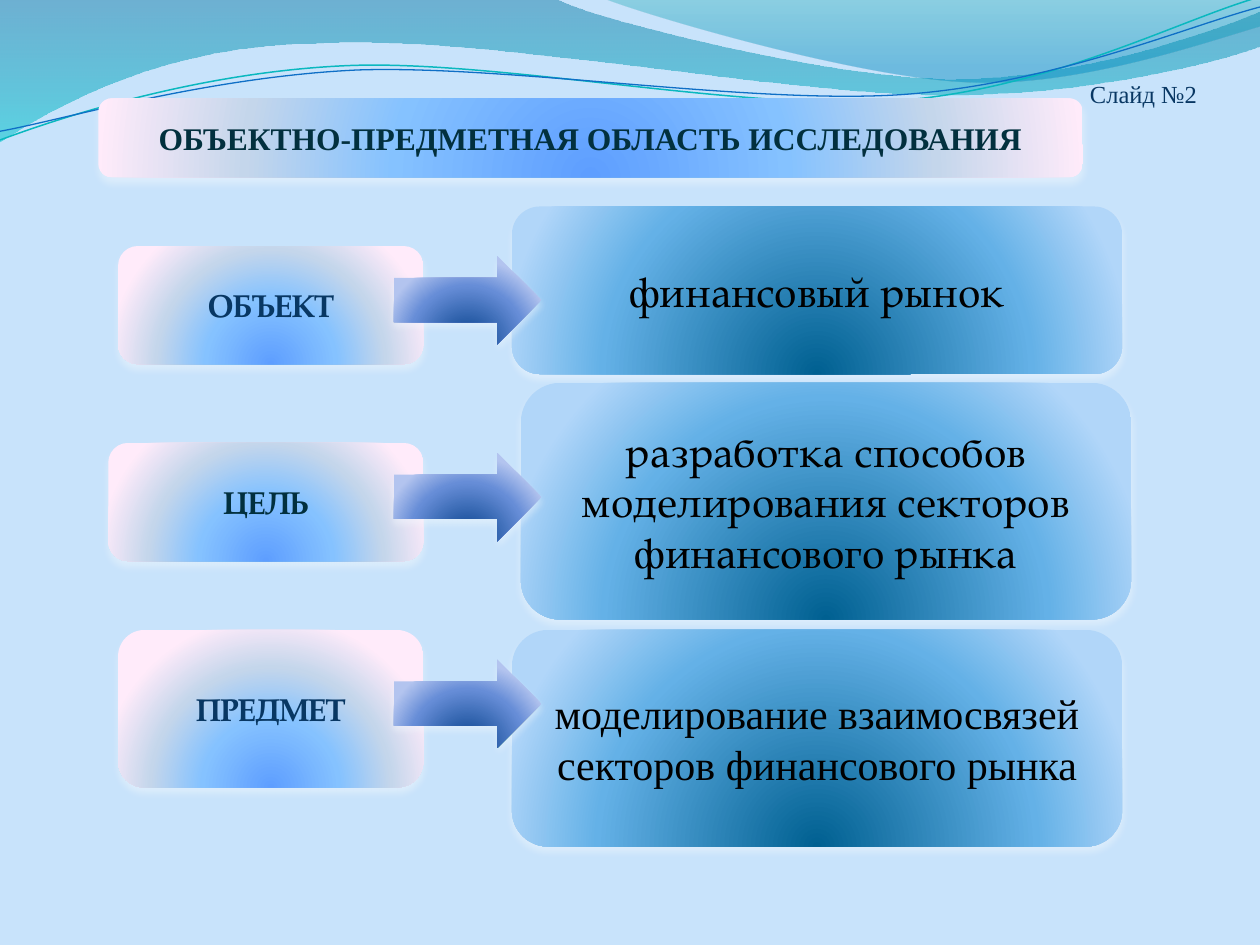
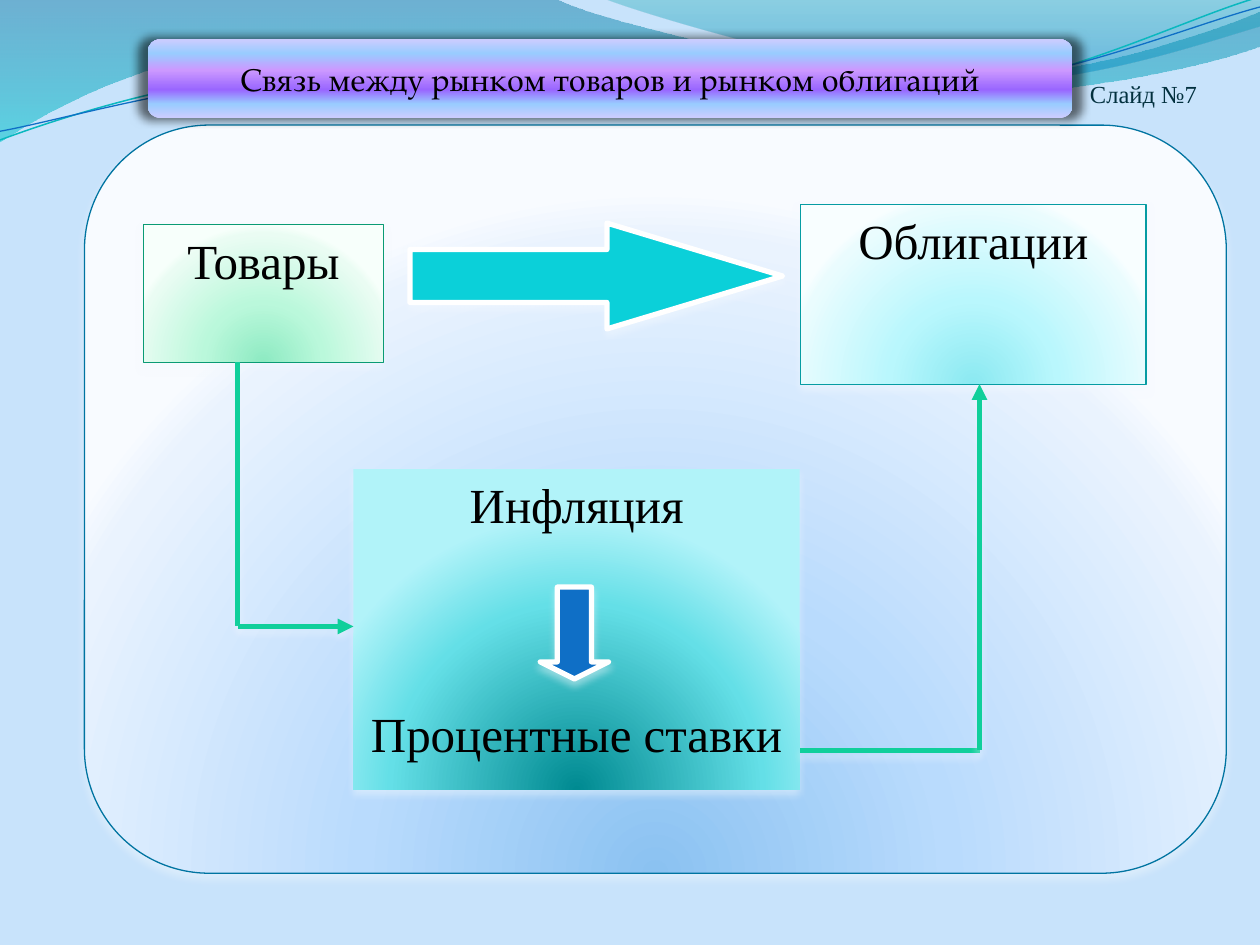
from itertools import pairwise

from pptx import Presentation
from pptx.dml.color import RGBColor as RGB
from pptx.enum.shapes import MSO_CONNECTOR, MSO_SHAPE
from pptx.enum.text import MSO_ANCHOR, PP_ALIGN
from pptx.oxml import parse_xml
from pptx.oxml.ns import nsdecls, qn
from pptx.util import Pt

SERIF = "Times New Roman"
PAGELLA = "TeX Gyre Pagella"

SKY = RGB(0xC8, 0xE3, 0xFB)
BLACK = RGB(0x00, 0x00, 0x00)
WHITE = RGB(0xFF, 0xFF, 0xFF)
NAVY = RGB(0x08, 0x37, 0x63)
DARK_TEAL = RGB(0x02, 0x30, 0x3E)
BLUE = RGB(0x0F, 0x6F, 0xC6)
TURQUOISE = RGB(0x0B, 0xD0, 0xD9)
GREEN = RGB(0x10, 0xCF, 0x9B)
WAVE_LINE = RGB(0x0A, 0xB8, 0xBF)
PANEL_LINE = RGB(0x00, 0x74, 0xA1)
GOODS_LINE = RGB(0x0A, 0x9B, 0x74)
BONDS_LINE = RGB(0x06, 0x9C, 0xA3)
GLOW = RGB(0xF4, 0xFA, 0xFF)

# Gradient stops: position in percent, colour, and opacity where it is not full
PINK_BLUE = [(0, RGB(0x5E, 0x9E, 0xFF)), (40, RGB(0x85, 0xC2, 0xFF)),
             (70, RGB(0xC4, 0xD6, 0xEB)), (100, RGB(0xFF, 0xEB, 0xFA))]
DEEP_BLUE = [(0, RGB(0x00, 0x60, 0x91)), (68, RGB(0x64, 0xB1, 0xE7)),
             (100, RGB(0xB1, 0xD6, 0xF9))]
ARROW_BLUE = [(0, RGB(0x00, 0x3D, 0x87)), (68, RGB(0x66, 0x8D, 0xD7)),
              (100, RGB(0xB3, 0xC4, 0xEF))]
PALE_BLUE = [(0, RGB(0x8B, 0xC2, 0xF1)), (43, RGB(0xB9, 0xDB, 0xFD)),
             (93, RGB(0xEA, 0xF3, 0xFE)), (100, RGB(0xF8, 0xFB, 0xFF))]
PALE_GREEN = [(0, RGB(0x8D, 0xEA, 0xC2)), (43, RGB(0xBA, 0xF8, 0xDB)),
              (93, RGB(0xEA, 0xFC, 0xF3)), (100, RGB(0xF7, 0xFF, 0xFB))]
PALE_AQUA = [(0, RGB(0x8B, 0xE9, 0xF1)), (43, RGB(0xB9, 0xF7, 0xFD)),
             (93, RGB(0xEA, 0xFC, 0xFE)), (100, RGB(0xF8, 0xFE, 0xFF))]
DEEP_TEAL = [(0, RGB(0x00, 0x8A, 0x91)), (68, RGB(0x64, 0xDF, 0xE7)),
             (100, RGB(0xB1, 0xF3, 0xF9))]
VIOLET = [(0, RGB(0xCC, 0xCC, 0xFF)), (18, RGB(0x99, 0xCC, 0xFF)),
          (36, RGB(0x99, 0x66, 0xFF)), (61, RGB(0xCC, 0x99, 0xFF)),
          (82, RGB(0x99, 0xCC, 0xFF)), (100, RGB(0xCC, 0xCC, 0xFF))]
BIG_WAVE_FILL = [(0, RGB(0x00, 0x74, 0xA1), 45), (100, RGB(0x00, 0xC6, 0xCF), 55)]
SMALL_WAVE_FILL = [(0, RGB(0x00, 0xA1, 0xA9), 30), (80, RGB(0x00, 0x8B, 0xBF), 45)]

# Outlines in points: a pair is a straight step, six numbers are a Bezier curve
BIG_WAVE = [(0, -1), (317, -1), (343, 12, 478, 45, 546, 45),
            (614, 45, 690, 19, 720, 6.5), (721, 26), (708, 32, 626, 55, 537, 54),
            (447, 54, 275, 20, 185, 24.5), (93, 25, 33, 60, -1, 81.5)]
SMALL_WAVE = [(345, -1), (367, 8, 491, 45, 554, 47),
              (616, 50, 692, 23, 720, 15), (720, 0)]
TEAL_CURVE = [(0, 80), (35, 67, 114, 41, 199, 37.5),
              (284, 34, 427, 64, 513, 57.5), (600, 51, 675, 11, 719, -1.5)]
BLUE_CURVE = [(0, 75), (34, 69, 118, 44, 204, 40),
              (290, 37, 430, 60, 516, 54), (602, 48, 678, 15, 720, 4)]


def gradient_fill(shape, stops, angle=None):
    """Fill linearly at the angle, or in circles from the bottom centre without one."""
    gs = ""
    for position, color, *opacity in stops:
        alpha = f'<a:alpha val="{opacity[0] * 1000}"/>' if opacity else ""
        gs += (f'<a:gs pos="{position * 1000}"><a:srgbClr val="{color}">'
               f'{alpha}</a:srgbClr></a:gs>')
    if angle is None:
        direction = ('<a:path path="circle"><a:fillToRect l="50000" t="130000" '
                     'r="50000" b="-30000"/></a:path>')
    else:
        direction = f'<a:lin ang="{angle * 60000}" scaled="0"/>'
    shape.fill.gradient()
    properties = shape._element.spPr
    properties.replace(properties.find(qn("a:gradFill")), parse_xml(
        f'<a:gradFill {nsdecls("a")} rotWithShape="1"><a:gsLst>{gs}</a:gsLst>'
        f'{direction}</a:gradFill>'))


def cast_shadow(shape, color=GLOW, opacity=48, blur=4.5, distance=3, spread=(100, 100)):
    properties = shape._element.spPr
    old = properties.find(qn("a:effectLst"))
    if old is not None:
        properties.remove(old)
    across, down = spread
    properties.append(parse_xml(
        f'<a:effectLst {nsdecls("a")}><a:outerShdw blurRad="{Pt(blur)}" '
        f'dist="{Pt(distance)}" dir="5400000" sx="{across * 1000}" sy="{down * 1000}" '
        f'algn="ctr" rotWithShape="0"><a:srgbClr val="{color}">'
        f'<a:alpha val="{opacity * 1000}"/></a:srgbClr></a:outerShdw></a:effectLst>'))


def set_line(shape, color, width):
    if color is None:
        shape.line.fill.background()
    else:
        shape.line.color.rgb = color
        shape.line.width = Pt(width)


def add_block(slide, kind, box, fill, line=None, line_width=0.75, angle=None):
    """Add a preset shape; fill is one colour or a list of gradient stops."""
    block = slide.shapes.add_shape(kind, *map(Pt, box))
    if isinstance(fill, RGB):
        block.fill.solid()
        block.fill.fore_color.rgb = fill
    else:
        gradient_fill(block, fill, angle)
    set_line(block, line, line_width)
    block.shadow.inherit = False
    cast_shadow(block)
    return block


def style(paragraph, font, size, color, bold=False, align=PP_ALIGN.CENTER):
    paragraph.alignment = align
    paragraph.font.name = font
    paragraph.font.size = Pt(size)
    paragraph.font.color.rgb = color
    paragraph.font.bold = bold


def write(block, text, font, size, color=BLACK, bold=False):
    frame = block.text_frame
    frame.word_wrap = True
    frame.vertical_anchor = MSO_ANCHOR.MIDDLE
    frame.text = text
    style(frame.paragraphs[0], font, size, color, bold)


def write_from_top(block, *texts, gap=0):
    frame = block.text_frame
    frame.word_wrap = True
    frame.vertical_anchor = MSO_ANCHOR.TOP
    frame.text = "\n".join(texts)
    for paragraph in frame.paragraphs:
        style(paragraph, SERIF, 28, BLACK)
        paragraph.space_after = Pt(10)
    for paragraph in frame.paragraphs[1:]:
        paragraph.space_before = Pt(gap)


def bend(wave, outline):
    """Turn the straight steps that the outline gives as curves into Bezier curves."""
    legs = list(wave._element.iter(qn("a:lnTo")))
    for leg, step in zip(legs, outline[1:]):
        if len(step) == 6:
            points = "".join(f'<a:pt x="{Pt(x) - wave.left}" y="{Pt(y) - wave.top}"/>'
                             for x, y in zip(step[::2], step[1::2]))
            leg.getparent().replace(leg, parse_xml(
                f'<a:cubicBezTo {nsdecls("a")}>{points}</a:cubicBezTo>'))


def add_outline(slide, outline, fill=None, line=None, width=0.75):
    ends = [tuple(map(Pt, step[-2:])) for step in outline]
    builder = slide.shapes.build_freeform(*ends[0])
    builder.add_line_segments(ends[1:], close=fill is not None)
    wave = builder.convert_to_shape()
    bend(wave, outline)
    if fill:
        gradient_fill(wave, fill, 90)
    else:
        wave.fill.background()
    set_line(wave, line, width)
    wave.shadow.inherit = False


def add_route(slide, *corners):
    """Join the corners with lines, the last of which ends in an arrowhead."""
    for start, end in pairwise(corners):
        leg = slide.shapes.add_connector(
            MSO_CONNECTOR.STRAIGHT, *map(Pt, start), *map(Pt, end))
        set_line(leg, GREEN, 3)
        cast_shadow(leg)
    leg.line._get_or_add_ln().append(
        parse_xml(f'<a:tailEnd {nsdecls("a")} type="triangle"/>'))


def add_base_slide(prs, number, color):
    """Add a slide with the waves and its numbered title."""
    slide = prs.slides.add_slide(prs.slide_layouts[5])
    add_outline(slide, BIG_WAVE, BIG_WAVE_FILL)
    add_outline(slide, SMALL_WAVE, SMALL_WAVE_FILL)
    add_outline(slide, TEAL_CURVE, line=WAVE_LINE, width=0.85)
    add_outline(slide, BLUE_CURVE, line=BLUE)

    title = slide.shapes.title
    slide.shapes._spTree.append(title._element)
    title.left, title.top, title.width, title.height = map(Pt, (36, 12.25, 648, 49.5))
    frame = title.text_frame
    frame.margin_left = frame.margin_right = frame.margin_bottom = 0
    frame.margin_top = Pt(3.6)
    frame.vertical_anchor = MSO_ANCHOR.BOTTOM
    frame.text = f"Слайд №{number}"
    style(frame.paragraphs[0], SERIF, 14, color, align=PP_ALIGN.RIGHT)
    return slide


def add_topic(slide, label, label_box, label_color, answer, answer_box, answer_font):
    """Add a label, its answer and the arrow that leads from one to the other."""
    left, top, height = label_box
    label_block = add_block(slide, MSO_SHAPE.ROUNDED_RECTANGLE,
                            (left, top, 242 - left, height), PINK_BLUE)
    write(label_block, label, PAGELLA, 18, label_color, bold=True)
    left, answer_top, answer_height = answer_box
    answer_block = add_block(slide, MSO_SHAPE.ROUNDED_RECTANGLE,
                             (left, answer_top, 348.75, answer_height), DEEP_BLUE)
    write(answer_block, answer, answer_font, 24)
    add_block(slide, MSO_SHAPE.RIGHT_ARROW, (225, top + height / 2 - 28.25, 84.4, 50.6),
              ARROW_BLUE)


def build_research_area(prs):
    slide = add_base_slide(prs, 2, NAVY)
    heading = add_block(slide, MSO_SHAPE.ROUNDED_RECTANGLE, (56.25, 56.25, 562.5, 45),
                        PINK_BLUE)
    write(heading, "ОБЪЕКТНО-ПРЕДМЕТНАЯ ОБЛАСТЬ ИССЛЕДОВАНИЯ", SERIF, 18, DARK_TEAL, bold=True)
    add_topic(slide, "ОБЪЕКТ", (67.5, 140.6, 67.5), NAVY,
              "финансовый рынок", (292.5, 118, 95.75), PAGELLA)
    add_topic(slide, "ЦЕЛЬ", (61.9, 253.1, 67.5), DARK_TEAL,
              "разработка способов моделирования секторов финансового рынка",
              (297.6, 218.75, 135.25), PAGELLA)
    add_topic(slide, "ПРЕДМЕТ", (67.5, 360, 90), NAVY,
              "моделирование взаимосвязей секторов финансового рынка",
              (292.5, 360, 123.75), SERIF)


def build_market_link(prs):
    slide = add_base_slide(prs, 7, DARK_TEAL)
    add_block(slide, MSO_SHAPE.ROUNDED_RECTANGLE, (48.25, 71.5, 652.5, 427.5),
              PALE_BLUE, PANEL_LINE)
    heading = add_block(slide, MSO_SHAPE.ROUNDED_RECTANGLE, (84.4, 22.5, 528.5, 45),
                        VIOLET, angle=270)
    cast_shadow(heading, BLACK, opacity=55, blur=5, distance=0, spread=(102, 105))
    write(heading, "Связь между рынком товаров и рынком облигаций", PAGELLA, 18)

    goods = add_block(slide, MSO_SHAPE.RECTANGLE, (82, 128.25, 137, 79),
                      PALE_GREEN, GOODS_LINE)
    write_from_top(goods, "Товары")
    rates = add_block(slide, MSO_SHAPE.RECTANGLE, (202, 267.75, 255, 183.5), DEEP_TEAL)
    write_from_top(rates, "Инфляция", "Процентные ставки", gap=87)
    bonds = add_block(slide, MSO_SHAPE.RECTANGLE, (457.4, 116.75, 197.5, 103),
                      PALE_AQUA, BONDS_LINE)
    write_from_top(bonds, "Облигации")

    down_arrow = add_block(slide, MSO_SHAPE.DOWN_ARROW, (308.75, 335.5, 39, 52.5),
                           BLUE, WHITE, 3)
    down_arrow.adjustments[1] = 0.25
    add_route(slide, (135.75, 207), (135.75, 358), (202, 358))
    add_route(slide, (457.25, 428.75), (559.75, 428.75), (559.75, 219.5))
    bonds_arrow = add_block(slide, MSO_SHAPE.RIGHT_ARROW, (234.25, 127.5, 213, 60.5),
                            TURQUOISE, WHITE, 3)
    bonds_arrow.adjustments[1] = 1.66


def main():
    prs = Presentation()
    prs.slide_width, prs.slide_height = Pt(720), Pt(540)
    background = prs.slide_master.background.fill
    background.solid()
    background.fore_color.rgb = SKY
    build_research_area(prs)
    build_market_link(prs)
    prs.save("out.pptx")


if __name__ == "__main__":
    main()
